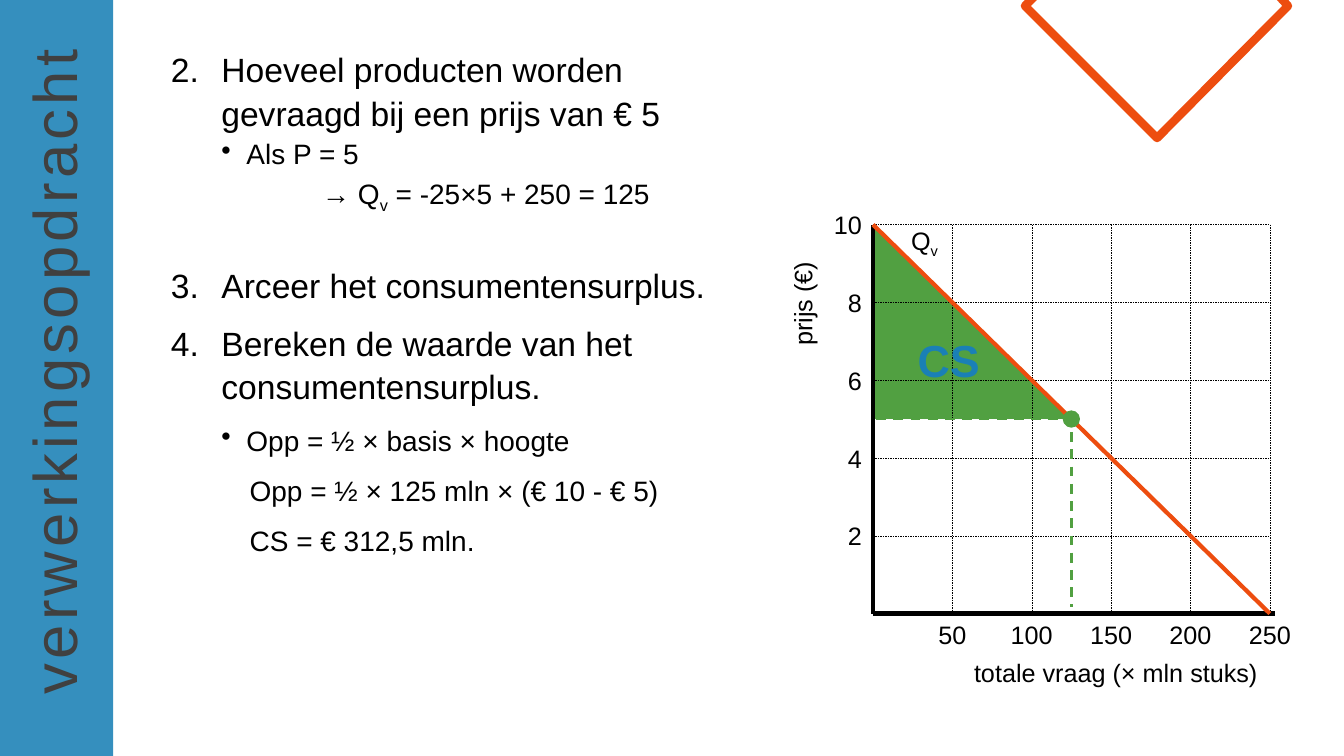
from lxml import etree
from pptx import Presentation
from pptx import util as u
from pptx.dml.color import RGBColor
from pptx.enum import dml, shapes, text
from pptx.oxml.ns import qn

BLACK = RGBColor(0x00, 0x00, 0x00)
GREY = RGBColor(0x40, 0x40, 0x40)
WHITE = RGBColor(0xFF, 0xFF, 0xFF)
BLUE = RGBColor(0x1A, 0x80, 0xB6)
ORANGE = RGBColor(0xED, 0x4D, 0x0F)
GREEN = RGBColor(0x51, 0xA0, 0x41)

# Graph scale in cm: origin, length of one unit on each axis
ORIGIN_X, ORIGIN_Y = 22.0, 15.46
CM_PER_QUANTITY, CM_PER_PRICE = 0.04, 0.98


def at(quantity, price):
    return ORIGIN_X + quantity * CM_PER_QUANTITY, ORIGIN_Y - price * CM_PER_PRICE


class SlideBuilder:
    font = "Arial"

    def __init__(self, slide):
        self.slide = slide
        self.shapes = slide.shapes

    def add_text(self, paragraph, content, size=18, color=BLACK, bold=False):
        """Parts between bars are subscript."""
        for i, part in enumerate(content.split("|")):
            if not part:
                continue
            run = paragraph.add_run()
            run.text = part
            style = {"name": self.font, "size": u.Pt(size), "bold": bold}
            for key, value in style.items():
                setattr(run.font, key, value)
            run.font.color.rgb = color
            if i % 2:
                run.font._element.set("baseline", "-25000")

    def title(self, content, box, size, color, rotation, spacing):
        title = self.shapes.title
        for key, value in zip(("left", "top", "width", "height"), box):
            setattr(title, key, u.Cm(value))
        title.rotation = rotation
        frame = title.text_frame
        frame.word_wrap = False
        frame.auto_size = text.MSO_AUTO_SIZE.NONE
        self.add_text(frame.paragraphs[0], content, size, color)
        frame.paragraphs[0].runs[0].font._element.set("spc", str(spacing * 100))
        return title

    def label(self, content, x, y, width=3.0, align=text.PP_ALIGN.CENTER,
              rotation=0, **style):
        """Text box centred on x, y."""
        height = 1.02
        box = self.shapes.add_textbox(u.Cm(x - width / 2), u.Cm(y - height / 2),
                                      u.Cm(width), u.Cm(height))
        box.rotation = rotation
        frame = box.text_frame
        frame.word_wrap = False
        frame.vertical_anchor = text.MSO_ANCHOR.MIDDLE
        frame.paragraphs[0].alignment = align
        self.add_text(frame.paragraphs[0], content, **style)

    def outline(self, points, closed=True):
        corners = [(u.Cm(x), u.Cm(y)) for x, y in points]
        builder = self.shapes.build_freeform(*corners[0])
        builder.add_line_segments(corners[1:], close=closed)
        shape = builder.convert_to_shape()
        shape.shadow.inherit = False
        return shape

    def shape(self, kind, left, top, width, height, color):
        shape = self.shapes.add_shape(kind, *map(u.Cm, (left, top, width, height)))
        shape.shadow.inherit = False
        shape.fill.solid()
        shape.fill.fore_color.rgb = color
        shape.line.fill.background()
        return shape

    def line(self, start, end, color=BLACK, width=3, dashed=False):
        line = self.shapes.add_connector(shapes.MSO_CONNECTOR.STRAIGHT,
                                         *map(u.Cm, (*start, *end)))
        line.line.color.rgb = color
        line.line.width = u.Pt(width)
        if dashed:
            line.line.dash_style = dml.MSO_LINE.DASH
        etree.SubElement(line._element.spPr, qn("a:effectLst"))

    def body(self, items, left, top, width, height):
        box = self.shapes.add_textbox(*map(u.Cm, (left, top, width, height)))
        frame = box.text_frame
        frame.word_wrap = True
        for i, (content, kind, changes) in enumerate(items):
            paragraph = frame.add_paragraph() if i else frame.paragraphs[0]
            form = {**BODY_STYLES[kind], **changes}
            for key in ("level", "line_spacing", "space_before"):
                setattr(paragraph, key, form[key])
            props = paragraph._p.get_or_add_pPr()
            props.set("marL", str(u.Cm(form["margin"])))
            props.set("indent", str(u.Cm(form["indent"])))
            tag, attributes = form["bullet"]
            etree.SubElement(props, qn(tag), attributes)
            self.add_text(paragraph, content, form["size"])


QUESTION = {"level": 0, "line_spacing": u.Pt(31), "space_before": u.Pt(10),
            "margin": 1.27, "indent": -1.27, "size": 24,
            "bullet": ("a:buAutoNum", {"type": "arabicPeriod", "startAt": "2"})}
ANSWER = {"level": 1, "line_spacing": u.Pt(31), "space_before": u.Pt(5),
          "margin": 1.9, "indent": -0.63, "size": 20,
          "bullet": ("a:buChar", {"char": "•"})}
STEP = {**ANSWER, "margin": 1.98, "indent": 0, "bullet": ("a:buNone", {})}
BODY_STYLES = {"question": QUESTION, "answer": ANSWER, "step": STEP}

ASSIGNMENT = [
    ("Hoeveel producten worden gevraagd bij een prijs van € 5", "question", {}),
    ("Als P = 5", "answer", {"line_spacing": 0.9}),
    ("→ Q|v| = -25×5 + 250 = 125", "step", {"line_spacing": 0.9, "margin": 3.81}),
    ("Arceer het consumentensurplus.", "question", {"space_before": u.Pt(36)}),
    ("Bereken de waarde van het consumentensurplus.", "question", {}),
    ("Opp = ½ × basis × hoogte", "answer", {}),
    ("Opp = ½ × 125 mln × (€ 10 - € 5)", "step", {}),
    ("CS = € 312,5 mln.", "step", {}),
]


def main():
    deck = Presentation()
    deck.slide_width, deck.slide_height = u.Cm(33.87), u.Cm(19.05)
    page = SlideBuilder(deck.slides.add_slide(deck.slide_layouts[5]))

    # Corner ornament
    corner = page.outline([(26.16, -0.18), (25.83, 0.15), (29.16, 3.48),
                           (32.46, 0.15), (32.16, -0.18)], closed=False)
    corner.fill.background()
    corner.line.color.rgb = ORANGE
    corner.line.width = u.Pt(6)

    # Side band with vertical title
    title = page.title("verwerkingsopdracht", (-7.19, 8.31, 17.02, 2.13),
                       size=44, color=GREY, rotation=270, spacing=3)
    band = page.shape(shapes.MSO_SHAPE.RECTANGLE, 0, 0, 2.85, 19.05, BLUE)
    tint = band.element.spPr.find(".//" + qn("a:srgbClr"))
    etree.SubElement(tint, qn("a:alpha"), val="88000")
    title.element.addprevious(band.element)

    # Consumer surplus area
    surplus = page.outline([at(0, 10), at(0, 5), at(125, 5)])
    surplus.line.fill.background()
    surplus.fill.patterned()
    surplus.fill.pattern = dml.MSO_PATTERN.DARK_VERTICAL
    surplus.fill.fore_color.rgb = GREEN
    surplus.fill.back_color.rgb = WHITE

    # Questions and answers
    page.body(ASSIGNMENT, 4.06, 1.04, 15.37, 17.27)

    # Grid and axis values
    for price in range(2, 11, 2):
        x, y = at(0, price)
        page.line((x, y), at(250, price), width=0.25, dashed=True)
        page.label(str(price), x - 0.64, y, width=1.22, align=text.PP_ALIGN.RIGHT)
    for quantity in range(50, 251, 50):
        x, y = at(quantity, 0)
        page.line(at(quantity, 10), (x, y), width=0.25, dashed=True)
        page.label(str(quantity), x, y + 0.52, width=1.58)

    # Axes and their names
    page.line(at(0, 10), at(0, 0))
    page.line(at(0, 0), at(253, 0))
    page.label("totale vraag (× mln stuks)", 28.12, 16.94, width=7.72)
    page.label("prijs (€)", 20.22, 7.65, rotation=270)

    # Demand line and market point
    page.line(at(0, 10), at(250, 0), ORANGE)
    page.label("Q|v|", 23.3, 6.1)
    x, y = at(125, 5)
    point = page.shape(shapes.MSO_SHAPE.OVAL, x - 0.2, y - 0.2, 0.4, 0.4, GREEN)
    point.line.color.rgb = GREEN
    point.line.width = u.Pt(1)
    page.line(at(2, 5), at(122, 5), GREEN, 1.75, dashed=True)
    page.line((x, y + 0.33), (x, ORIGIN_Y - 0.17), GREEN, 1.75, dashed=True)
    page.label("CS", 23.91, 9.07, size=32, color=BLUE, bold=True)

    deck.save("out.pptx")


if __name__ == "__main__":
    main()
